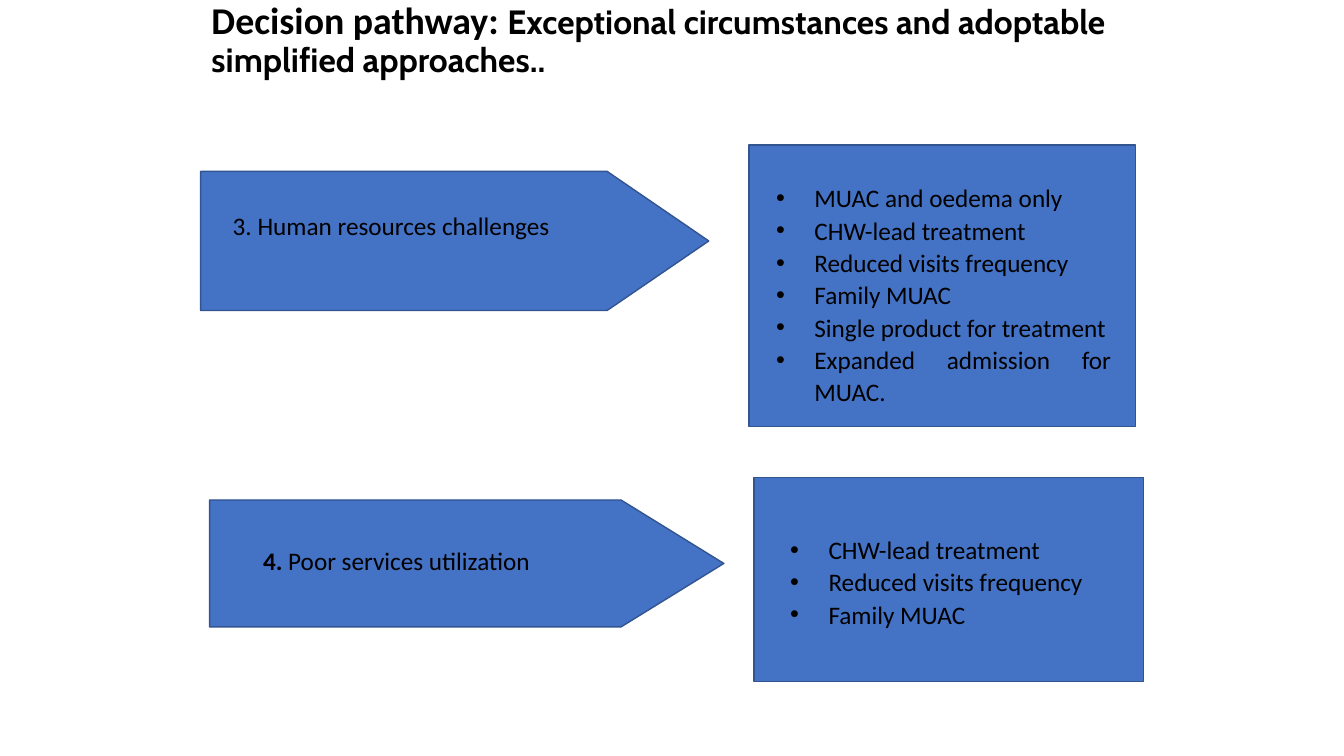
from dataclasses import dataclass
from typing import Any

from lxml import etree
from pptx import Presentation
from pptx.dml.color import RGBColor
from pptx.enum.shapes import MSO_SHAPE
from pptx.enum.text import MSO_ANCHOR, PP_ALIGN
from pptx.oxml.ns import qn
from pptx.util import Inches, Pt

RECTANGLE = MSO_SHAPE.RECTANGLE
CONNECTOR = MSO_SHAPE.FLOWCHART_OFFPAGE_CONNECTOR
MIDDLE, TOP = MSO_ANCHOR.MIDDLE, MSO_ANCHOR.TOP
LEFT, JUSTIFY = PP_ALIGN.LEFT, PP_ALIGN.JUSTIFY

WIDTH, HEIGHT = Inches(13.33), Inches(7.5)
BODY = {"name": "Calibri", "size": Pt(18), "bold": False}
BODY_BOLD = {**BODY, "bold": True}
TITLE_LEAD = {"name": "Calibri", "size": Pt(27), "bold": True}
TITLE_REST = {"name": "Cabin", "size": Pt(24), "bold": True}
TITLE_PARA = {"alignment": LEFT, "line_spacing": 0.9}
LABEL_PARA = {"alignment": JUSTIFY, "line_spacing": 1.07, "space_after": Pt(8)}
LIST_PARA = {"alignment": JUSTIFY, "line_spacing": 1.07}

PATHWAYS = [
    {
        "arrow": (14.93, 22.67, 37.81, 18.4),
        "label": (16.58, 26.93, 27.98, 5.47),
        "box": (55.74, 19.2, 28.73, 37.2),
        "list": (57.01, 23.2, 26.41, 31.47),
        "spans": [("3. Human resources challenges", BODY)],
        "approaches": [
            "MUAC and oedema only",
            "CHW-lead treatment",
            "Reduced visits frequency",
            "Family MUAC",
            "Single product for treatment",
            "Expanded admission for MUAC.",
        ],
    },
    {
        "arrow": (15.6, 66.13, 38.26, 16.8),
        "label": (18.83, 71.2, 24.61, 5.47),
        "box": (56.11, 63.2, 28.96, 26.93),
        "list": (58.06, 69.73, 25.73, 14.13),
        "spans": [("4. ", BODY_BOLD), ("Poor services utilization", BODY)],
        "approaches": ["CHW-lead treatment", "Reduced visits frequency", "Family MUAC"],
    },
]


def colour(value):
    """Turn a hex string into a colour."""
    return RGBColor.from_string(value)


def apply(target, values):
    """Set every attribute named in a dict of format values."""
    for name, value in values.items():
        setattr(target, name, value)


def frame(area):
    """Turn percentages of the slide into left, top, width and height."""
    sides = (WIDTH, HEIGHT, WIDTH, HEIGHT)
    return [round(side * share / 100) for side, share in zip(sides, area)]


@dataclass
class Painter:
    """Hold the style and the current slide."""

    page: Any
    fill: str = "4472C4"
    line: str = "325491"
    ink: str = "000000"
    indent: int = Inches(0.38)

    def panel(self, kind, bounds):
        """Add a filled and outlined shape."""
        shape = self.page.shapes.add_shape(kind, *bounds)
        shape.shadow.inherit = False
        shape.fill.solid()
        shape.fill.fore_color.rgb = colour(self.fill)
        shape.line.color.rgb = colour(self.line)
        shape.line.width = Pt(1)
        return shape

    def box(self, area):
        """Add a rectangle."""
        self.panel(RECTANGLE, frame(area))

    def arrow(self, area):
        """Add a connector turned to point right within the area."""
        left, top, width, height = frame(area)
        shift = (width - height) // 2
        self.panel(CONNECTOR, (left + shift, top - shift, height, width)).rotation = 270

    def text(self, area, paragraphs, layout, anchor=TOP, bulleted=False):
        """Add a text box from paragraphs made of spans."""
        text_frame = self.page.shapes.add_textbox(*frame(area)).text_frame
        apply(text_frame, {"word_wrap": True, "vertical_anchor": anchor})
        if anchor == MIDDLE:
            apply(text_frame, {"margin_top": 0, "margin_bottom": 0})
        for index, spans in enumerate(paragraphs):
            para = text_frame.add_paragraph() if index else text_frame.paragraphs[0]
            apply(para, layout)
            if bulleted:
                self.bullet(para)
            for words, style in spans:
                span = para.add_run()
                span.text = words
                apply(span.font, style)
                span.font.color.rgb = colour(self.ink)

    def bullet(self, para):
        """Give a paragraph a hanging bullet."""
        properties = para._p.get_or_add_pPr()
        properties.set("marL", str(self.indent))
        properties.set("indent", str(-self.indent))
        etree.SubElement(properties, qn("a:buFont"), typeface="Arial")
        etree.SubElement(properties, qn("a:buChar"), char="•")


def main():
    """Build the decision pathway slide."""
    deck = Presentation()
    apply(deck, {"slide_width": WIDTH, "slide_height": HEIGHT})
    painter = Painter(deck.slides.add_slide(deck.slide_layouts[6]))
    title = [
        ("Decision pathway: ", TITLE_LEAD),
        ("Exceptional circumstances and adoptable simplified approaches..", TITLE_REST),
    ]
    painter.text((15, 0.27, 70.07, 10.27), [title], TITLE_PARA, MIDDLE)
    for pathway in PATHWAYS:
        painter.arrow(pathway["arrow"])
        painter.text(pathway["label"], [pathway["spans"]], LABEL_PARA)
        painter.box(pathway["box"])
        items = [[(approach, BODY)] for approach in pathway["approaches"]]
        painter.text(pathway["list"], items, LIST_PARA, bulleted=True)
    deck.save("out.pptx")


if __name__ == "__main__":
    main()
